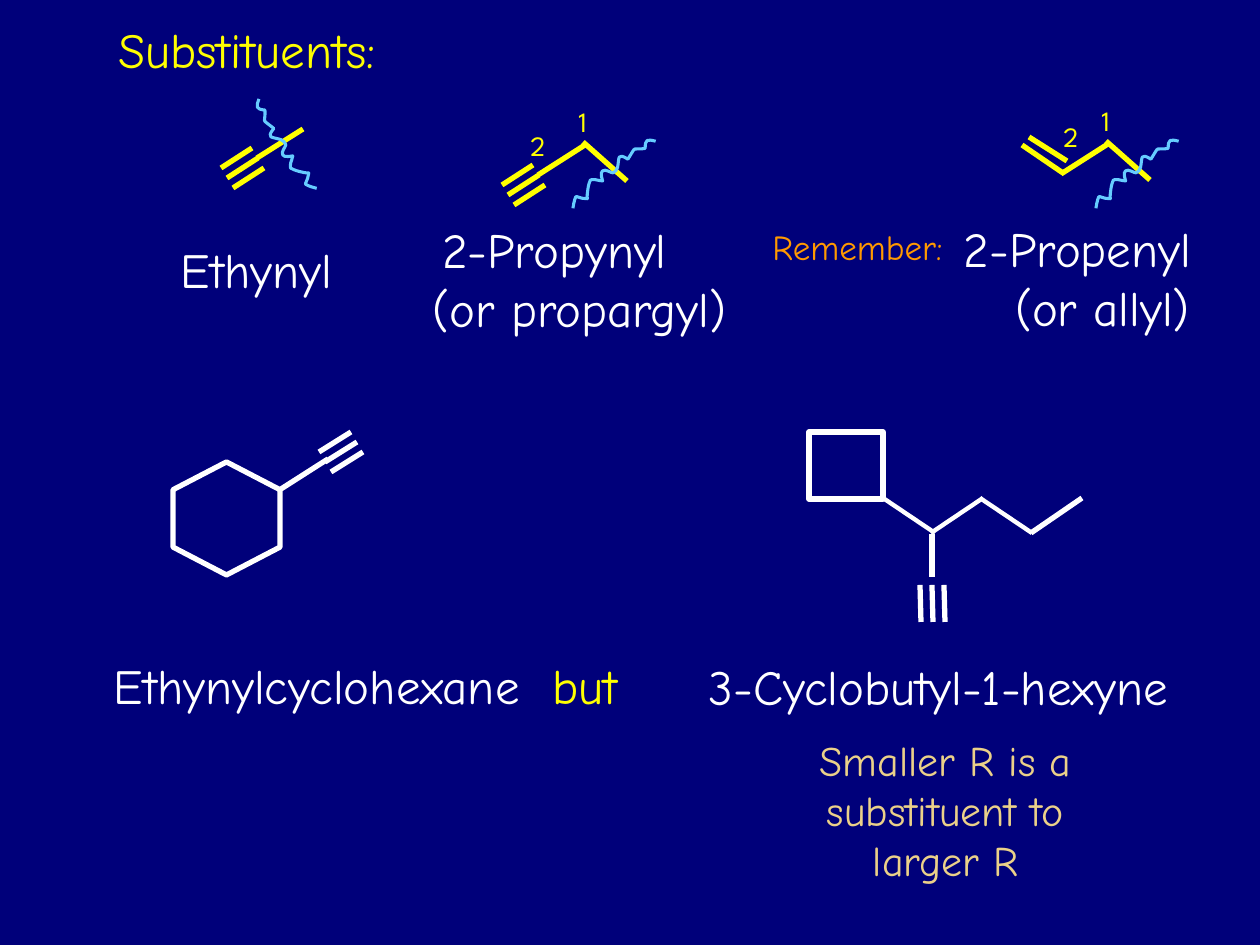
from math import cos, radians, sin

from lxml import etree
from pptx import Presentation
from pptx.dml.color import RGBColor
from pptx.enum.shapes import MSO_CONNECTOR, MSO_SHAPE
from pptx.enum.text import MSO_AUTO_SIZE, PP_ALIGN
from pptx.oxml.ns import qn
from pptx.util import Pt

STRAIGHT = MSO_CONNECTOR.STRAIGHT
HEXAGON, RECTANGLE = MSO_SHAPE.HEXAGON, MSO_SHAPE.RECTANGLE
LEFT, CENTER = PP_ALIGN.LEFT, PP_ALIGN.CENTER
FIT_SHAPE = MSO_AUTO_SIZE.SHAPE_TO_FIT_TEXT

PX = 914400 / 126
THEME = {
    "navy": "00007A", "yellow": "FFFF00", "white": "FFFFFF",
    "sky": "66CCFF", "orange": "FF9900", "sand": "EBD189",
    "body": "Comic Neue", "digits": "League Spartan",
    "name": 28, "remark": 24, "aside": 20, "locant": 16,
    "bond": 3, "thin": 2.5, "cut": 1.75,
}

# Names: (left, top, width, height), paragraphs of (text, colour) spans
NAMES = [
    ((78, 13, 338, 72), [[("Substituents:", "yellow")]]),
    ((150, 233, 213, 72), [[("Ethynyl", "white")]]),
    ((406, 213, 347, 130), [[("2-Propynyl", "white")], [("(or propargyl)", "white")]]),
    ((929, 212, 347, 130), [[("2-Propenyl", "white")], [("(or allyl)", "white")]]),
    ((668, 650, 541, 72), [[("3-Cyclobutyl-1-hexyne", "white")]]),
    ((23, 649, 685, 72), [[("Ethynylcyclohexane  ", "white"), ("but", "yellow")]]),
]
FIRST_LINE_SHIFT = 50  # right indent that moves the first of two lines left
REMARK = ((800, 728, 291, 165), "Smaller R is a substituent to larger R")
ASIDE = ((760, 219, 209, 55), "Remember:")
LOCANTS = [("1", 566, 98), ("2", 518, 122), ("1", 1089, 97), ("2", 1051, 113)]

# Bonds: x1, y1, x2, y2
YELLOW_BONDS = [
    (257, 158, 303, 129), (538, 175, 585, 145), (583, 142, 627, 181),
    (1022, 145, 1063, 173), (1029, 137, 1067, 161),
    (1061, 174, 1108, 144), (1106, 141, 1150, 180),
]
WHITE_BONDS = [(281, 489, 328, 459), (1082, 498, 1031, 533), (932, 577, 932, 534)]
THIN_BONDS = [(883, 498, 935, 533), (983, 498, 931, 533), (980, 498, 1032, 533)]
# Triple bonds: middle line, step to its neighbours, colour
TRIPLE_BONDS = [
    ((227, 178, 258, 158), (6, 10), "yellow"),
    ((508, 195, 539, 175), (6, 10), "yellow"),
    ((325, 462, 357, 442), (6, 10), "white"),
    ((933, 622, 932, 585), (12, 0), "white"),
]
# Rings: preset, box, rotation
RINGS = [(HEXAGON, (170, 465, 113, 107), 90), (RECTANGLE, (809, 432, 74, 67), 0)]

# Wavy cut: Bezier points around its centre as they lie at WAVE_TILT degrees
WAVE_TILT = 25.9
WAVE = [
    (-27, -44), (-30, -36), (-30, -34), (-21, -33), (-20, -19), (-26, -26), (-12, -15),
    (-20, -5), (-14, -7), (-5, -4), (-3, -2), (0, -2), (0, 1),
    (0, 3), (-5, 8), (-3, 11), (-2, 14), (7, 12), (7, 12),
    (5, 15), (7, 17), (5, 19), (5, 21), (4, 24), (5, 24),
    (8, 26), (18, 29), (23, 29), (22, 31), (22, 32), (22, 34),
    (22, 36), (19, 39), (20, 40), (23, 42), (31, 44), (31, 44),
]
CUT_SIZE = (91, 57)
CUTS = [(242, 116, 25.9), (568, 146, 109.7), (1091, 146, 109.7)]  # left, top, rotation


def emu(*lengths):
    return [round(length * PX) for length in lengths]


def color(name):
    return RGBColor.from_string(THEME[name])


def add_text(page, paragraphs, frame, size="name", font="body", align=CENTER, wrap=True):
    box = page.shapes.add_textbox(*emu(*frame))
    body = box.text_frame
    body.word_wrap = wrap
    body.auto_size = FIT_SHAPE
    for index, spans in enumerate(paragraphs):
        para = body.paragraphs[0] if index == 0 else body.add_paragraph()
        para.alignment = align
        if len(paragraphs) > 1:
            indent = FIRST_LINE_SHIFT if index == 0 else 0
            para._p.get_or_add_pPr().set("marR", str(emu(indent)[0]))
        for text, tint in spans:
            span = para.add_run()
            span.text = text
            span.font.name = THEME[font]
            span.font.size = Pt(THEME[size])
            span.font.color.rgb = color(tint)


def add_bond(page, ends, tint, weight="bond"):
    bond = page.shapes.add_connector(STRAIGHT, *emu(*ends))
    bond.line.color.rgb = color(tint)
    bond.line.width = Pt(THEME[weight])
    etree.SubElement(bond._element.spPr, qn("a:effectLst"))


def style_outline(shape, tint, weight):
    shape.shadow.inherit = False
    shape.fill.background()
    shape.line.color.rgb = color(tint)
    shape.line.width = Pt(THEME[weight])


def turn(point, degrees):
    x, y = point
    c, s = cos(radians(degrees)), sin(radians(degrees))
    return x * c - y * s, x * s + y * c


def bend_segments(shape):
    """Make each three straight segments the points of one Bezier curve."""
    lines = list(shape._element.iter(qn("a:lnTo")))
    for start in range(0, len(lines), 3):
        curve = etree.Element(qn("a:cubicBezTo"))
        lines[start].addprevious(curve)
        for line in lines[start:start + 3]:
            curve.append(line[0])
            line.getparent().remove(line)


def add_cut(page, left, top, rotation):
    points = [emu(*turn(point, -WAVE_TILT)) for point in WAVE]
    builder = page.shapes.build_freeform(*points[0])
    builder.add_line_segments(points[1:], close=False)
    cut = builder.convert_to_shape()
    bend_segments(cut)
    cut.left, cut.top, cut.width, cut.height = emu(left, top, *CUT_SIZE)
    cut.rotation = rotation
    style_outline(cut, "sky", "cut")


def main():
    deck = Presentation()
    deck.slide_width, deck.slide_height = emu(1260, 945)
    page = deck.slides.add_slide(deck.slide_layouts[6])
    page.background.fill.solid()
    page.background.fill.fore_color.rgb = color("navy")

    # Structures
    for bonds, tint, weight in ((YELLOW_BONDS, "yellow", "bond"),
                                (WHITE_BONDS, "white", "bond"),
                                (THIN_BONDS, "white", "thin")):
        for ends in bonds:
            add_bond(page, ends, tint, weight)
    for (x1, y1, x2, y2), (dx, dy), tint in TRIPLE_BONDS:
        for side in (-1, 0, 1):
            shift_x, shift_y = side * dx, side * dy
            add_bond(page, (x1 + shift_x, y1 + shift_y, x2 + shift_x, y2 + shift_y), tint)
    for preset, frame, rotation in RINGS:
        ring = page.shapes.add_shape(preset, *emu(*frame))
        ring.rotation = rotation
        if preset == HEXAGON:
            ring.adjustments[0] = 0.26
        style_outline(ring, "white", "bond")
    for cut in CUTS:
        add_cut(page, *cut)

    # Names, remarks and locants
    for frame, paragraphs in NAMES:
        add_text(page, paragraphs, frame)
    frame, text = REMARK
    add_text(page, [[(text, "sand")]], frame, size="remark")
    frame, text = ASIDE
    add_text(page, [[(text, "orange")]], frame, size="aside", align=LEFT, wrap=False)
    for text, x, y in LOCANTS:
        add_text(page, [[(text, "yellow")]], (x, y, 43, 47),
                 size="locant", font="digits", align=LEFT, wrap=False)

    deck.save("out.pptx")


if __name__ == "__main__":
    main()
